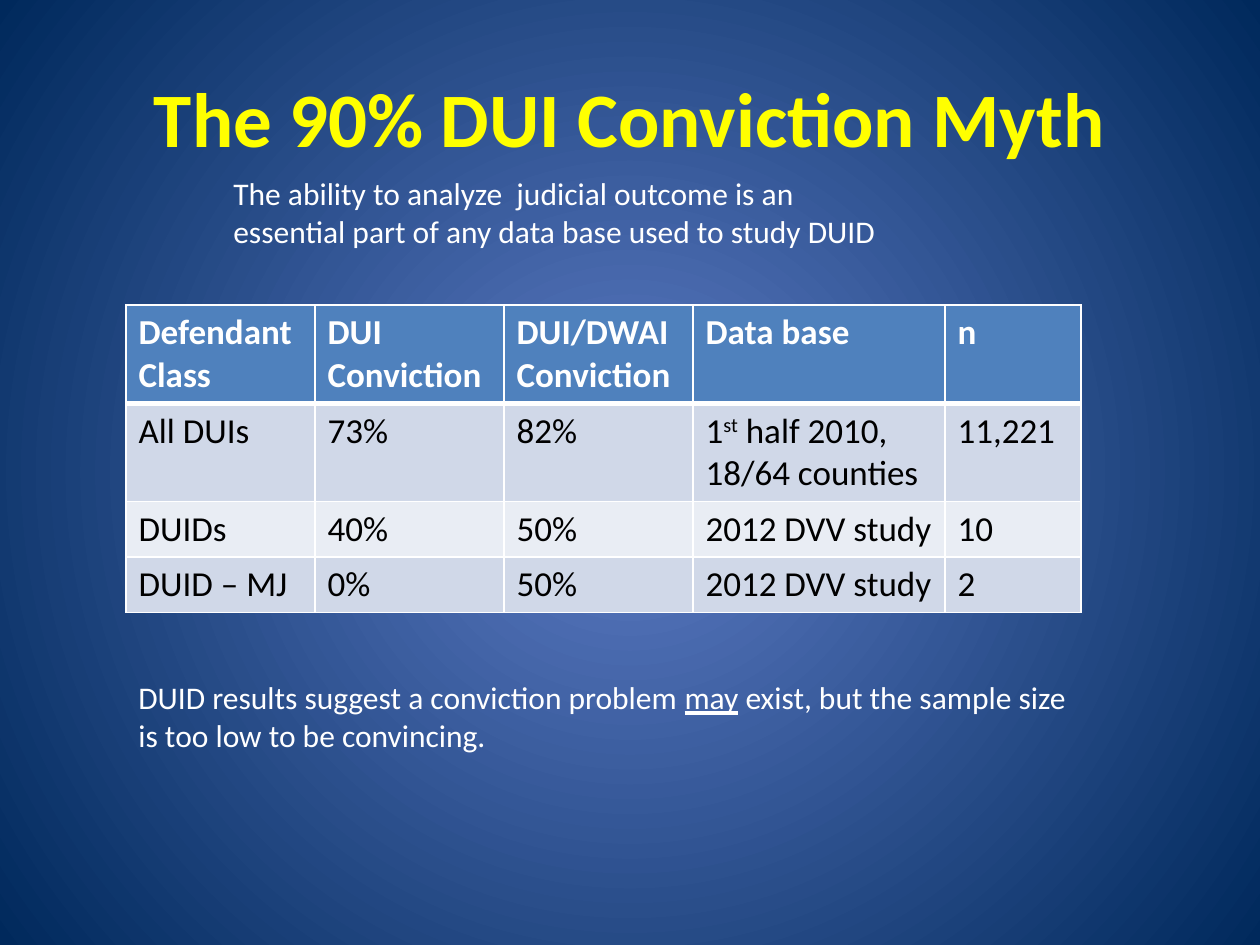
from lxml.etree import SubElement
from pptx import Presentation
from pptx.dml.color import RGBColor
from pptx.enum.text import MSO_ANCHOR, PP_ALIGN
from pptx.oxml import parse_xml
from pptx.oxml.ns import nsdecls, qn
from pptx.util import Pt

PX = 914400 / 126  # EMU per px
YELLOW = RGBColor(0xFF, 0xFF, 0x00)
WHITE = RGBColor(0xFF, 0xFF, 0xFF)
BLACK = RGBColor(0x00, 0x00, 0x00)
GLOW_BLUE = RGBColor(0x5E, 0x7C, 0xC5)
NAVY = RGBColor(0x00, 0x29, 0x5C)
HEADER_BLUE = RGBColor(0x4F, 0x81, 0xBD)
BAND_DARK = RGBColor(0xD0, 0xD8, 0xE8)
BAND_LIGHT = RGBColor(0xE9, 0xED, 0xF4)


def px(*lengths):
    return [round(length * PX) for length in lengths]


def add_run(paragraph, text, size, color, bold=False):
    run = paragraph.add_run()
    run.text = text
    run.font.name = "Calibri"
    run.font.size = Pt(size)
    run.font.color.rgb = color
    run.font.bold = bold
    return run


prs = Presentation()
prs.slide_width, prs.slide_height = px(1260, 945)
slide = prs.slides.add_slide(prs.slide_layouts[5])

# Background: radial gradient from the centre
backdrop = slide.background.fill
backdrop.gradient()
for stop, color in zip(backdrop.gradient_stops, (GLOW_BLUE, NAVY)):
    stop.color.rgb = color
gradient = slide.element.find(".//" + qn("a:gradFill"))
gradient.replace(gradient.find(qn("a:lin")), parse_xml(
    f'<a:path {nsdecls("a")} path="circle">'
    '<a:fillToRect l="50000" t="50000" r="50000" b="50000"/></a:path>'))

# Title
title = slide.shapes.title
title.left, title.top, title.width, title.height = px(63, 38, 1134, 157)
title.text_frame.vertical_anchor = MSO_ANCHOR.MIDDLE
heading = title.text_frame.paragraphs[0]
heading.alignment = PP_ALIGN.CENTER
add_run(heading, "The 90% DUI Conviction Myth", 44, YELLOW, bold=True)

# Conviction table; a cell given as a tuple has its second part raised
rows = [
    ["Defendant Class", "DUI Conviction", "DUI/DWAI Conviction", "Data base", "n"],
    ["All DUIs", "73%", "82%", ("1", "st", " half 2010, 18/64 counties"), "11,221"],
    ["DUIDs", "40%", "50%", "2012 DVV study", "10"],
    ["DUID – MJ", "0%", "50%", "2012 DVV study", "2"],
]
column_widths = [189, 189, 189, 252, 136]
row_heights = [98, 98, 55, 55]
convictions = slide.shapes.add_table(
    len(rows), len(column_widths),
    *px(126, 305, sum(column_widths), sum(row_heights))).table
for column, width in zip(convictions.columns, px(*column_widths)):
    column.width = width
for row, height in zip(convictions.rows, px(*row_heights)):
    row.height = height

for r, row in enumerate(rows):
    is_header = r == 0
    band = HEADER_BLUE if is_header else BAND_DARK if r % 2 else BAND_LIGHT
    for c, content in enumerate(row):
        cell = convictions.cell(r, c)
        parts = content if isinstance(content, tuple) else (content,)
        for i, part in enumerate(parts):
            run = add_run(cell.text_frame.paragraphs[0], part, 20,
                          WHITE if is_header else BLACK, is_header)
            if i == 1:
                run.font._element.set("baseline", "30000")
        # White borders, heavier between header and body; they precede the fill
        props = cell._tc.get_or_add_tcPr()
        for side in "LRTB":
            heavy = (r, side) in ((0, "B"), (1, "T"))
            border = SubElement(props, qn(f"a:ln{side}"), w=str(Pt(3 if heavy else 1)))
            SubElement(SubElement(border, qn("a:solidFill")), qn("a:srgbClr"), val=str(WHITE))
        cell.fill.solid()
        cell.fill.fore_color.rgb = band

# Remarks above and below the table; each run is (text, underlined)
remarks = [
    ((221, 168, 683, 89), [
        ("The ability to analyze  judicial outcome is an essential part of "
         "any data base used to study DUID", False)]),
    ((126, 672, 966, 89), [
        ("DUID results suggest a conviction problem ", False),
        ("may", True),
        (" exist, but the sample size is too low to be convincing.", False)]),
]
for place, runs in remarks:
    frame = slide.shapes.add_textbox(*px(*place)).text_frame
    frame.word_wrap = True
    for text, underlined in runs:
        add_run(frame.paragraphs[0], text, 18, WHITE).font.underline = underlined

prs.save("out.pptx")
